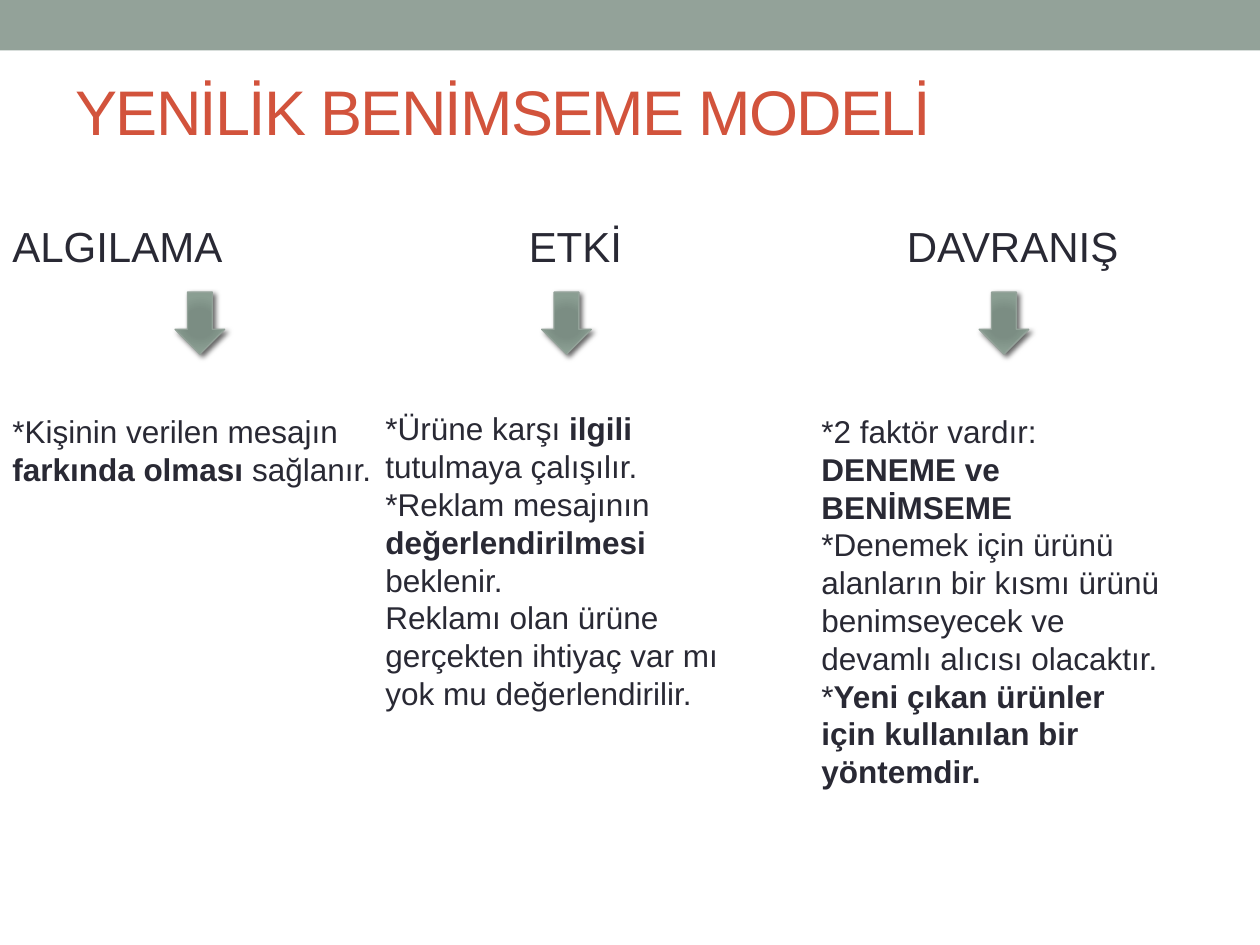
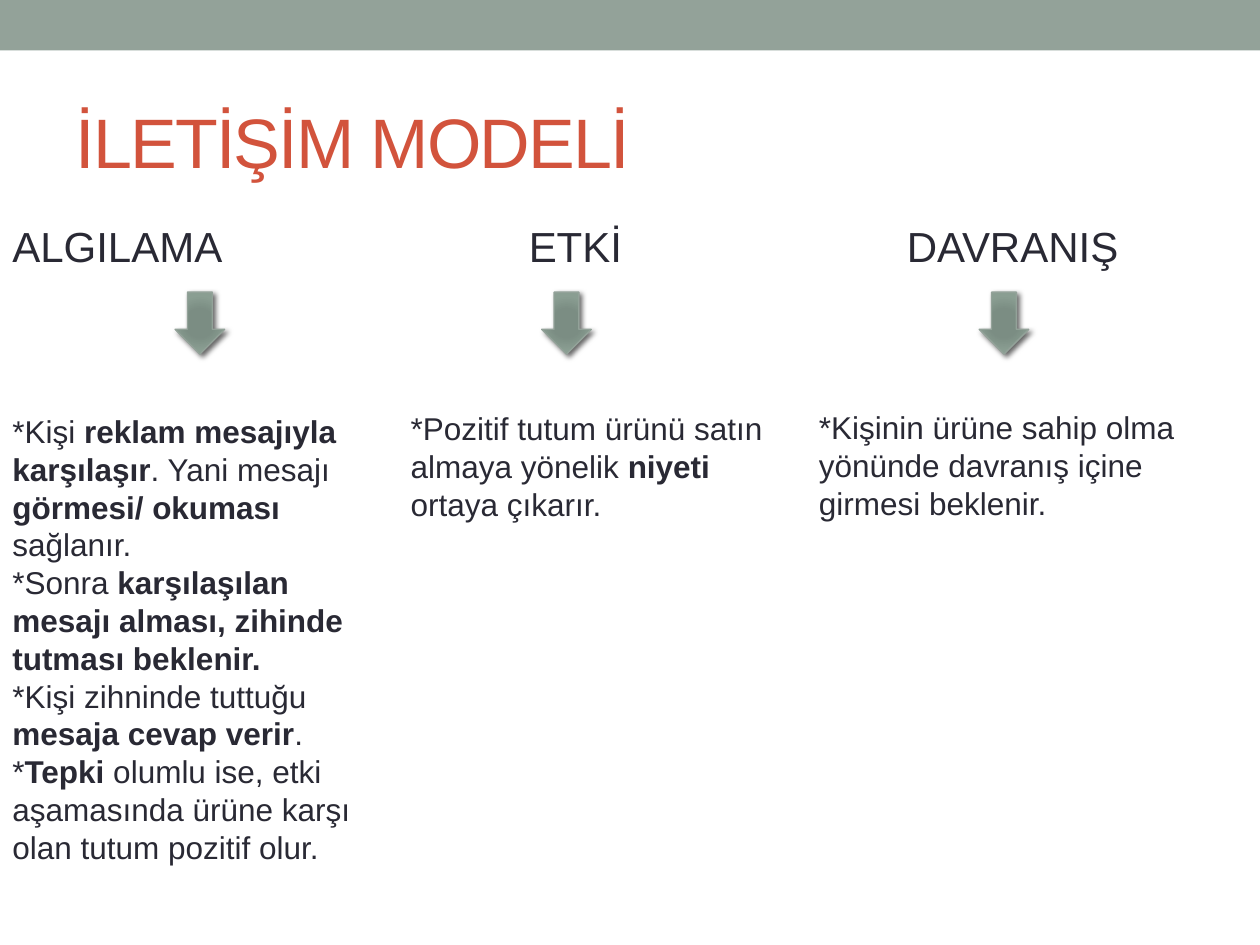
from dataclasses import dataclass

from lxml.etree import SubElement
from pptx import Presentation
from pptx.dml.color import RGBColor
from pptx.enum.shapes import MSO_SHAPE
from pptx.enum.text import MSO_ANCHOR, MSO_AUTO_SIZE, PP_ALIGN
from pptx.oxml import parse_xml
from pptx.oxml.ns import nsdecls, qn
from pptx.shapes.autoshape import Shape
from pptx.slide import Slide
from pptx.text.text import TextFrame
from pptx.util import Cm, Pt

# Shared look
FONT = "Arial"
SAGE, RUST, INK = "93A299", "D2533C", "292934"
STOPS = [(0, "7B8E82"), (34, "7B8D83"), (70, "8A9E92"), (100, SAGE)]
HEADS = "ALGILAMA\tETKİ\tDAVRANIŞ"
TABS = (10.41, 18.03)
ARROWS = (3.53, 10.92, 19.74)


@dataclass
class Note:
    """A text column; bars in a line switch bold on and off."""
    left: float
    top: float
    width: float
    height: float
    lines: list[str]


@dataclass
class Page:
    title: str
    size: int
    anchor: MSO_ANCHOR
    notes: list[Note]


PAGES = [
    Page("YENİLİK BENİMSEME MODELİ", 36, MSO_ANCHOR.TOP, [
        Note(7.52, 8.13, 8.18, 7.19, [
            "*Ürüne karşı |ilgili |tutulmaya çalışılır.",
            "*Reklam mesajının |değerlendirilmesi| beklenir.",
            "Reklamı olan ürüne gerçekten ihtiyaç var mı yok mu değerlendirilir."]),
        Note(16.31, 8.18, 7.37, 7.95, [
            "*2 faktör vardır:",
            "|DENEME ve BENİMSEME",
            "*Denemek için ürünü alanların bir kısmı ürünü benimseyecek ve "
            "devamlı alıcısı olacaktır.",
            "*|Yeni çıkan ürünler için kullanılan bir yöntemdir."]),
        Note(0, 8.18, 8.18, 1.8, [
            "*Kişinin verilen mesajın |farkında olması |sağlanır."]),
    ]),
    Page("İLETİŞİM MODELİ", 40, MSO_ANCHOR.MIDDLE, [
        Note(8.03, 8.13, 8.18, 3.33, [
            "*Pozitif tutum ürünü satın almaya yönelik |niyeti| ortaya çıkarır."]),
        Note(0, 8.18, 8.18, 10.26, [
            "*Kişi |reklam mesajıyla karşılaşır|. Yani mesajı "
            "|görmesi/ okuması |sağlanır.",
            "*Sonra |karşılaşılan mesajı alması, zihinde tutması beklenir.",
            "*Kişi zihninde tuttuğu |mesaja cevap verir|.",
            "*|Tepki| olumlu ise, etki aşamasında ürüne karşı olan tutum "
            "pozitif olur."]),
        Note(16.26, 8.1, 8.18, 2.57, [
            "*Kişinin ürüne sahip olma yönünde davranış içine girmesi beklenir."]),
    ]),
]


def paint(code: str) -> RGBColor:
    return RGBColor.from_string(code)


def place(shape: Shape, left: float, top: float, width: float, height: float) -> None:
    shape.left, shape.top = Cm(left), Cm(top)
    shape.width, shape.height = Cm(width), Cm(height)


def write(frame: TextFrame, lines: list[str], *, size: int = 18, color: str = INK,
          anchor: MSO_ANCHOR = MSO_ANCHOR.TOP, track: int = 0,
          tabs: tuple[float, ...] = ()) -> None:
    frame.word_wrap = True
    frame.vertical_anchor = anchor
    for row, line in enumerate(lines):
        para = frame.add_paragraph() if row else frame.paragraphs[0]
        para.alignment = PP_ALIGN.LEFT
        if tabs:
            stops = SubElement(para._p.get_or_add_pPr(), qn("a:tabLst"))
            for stop in tabs:
                SubElement(stops, qn("a:tab"), pos=str(Cm(stop)), algn="l")
        for turn, part in enumerate(line.split("|")):
            if not part:
                continue
            run = para.add_run()
            run.text = part
            font = run.font
            font.name, font.size, font.bold = FONT, Pt(size), turn % 2 == 1
            font.color.rgb = paint(color)
            if track:
                run._r.get_or_add_rPr().set("spc", str(track))


def add_band(slide: Slide) -> None:
    band = slide.shapes.add_shape(MSO_SHAPE.RECTANGLE, 0, 0, Cm(25.4), Cm(1.02))
    band.shadow.inherit = False
    band.fill.solid()
    band.fill.fore_color.rgb = paint(SAGE)
    band.line.fill.background()


def add_arrow(slide: Slide, left: float) -> None:
    arrow = slide.shapes.add_shape(
        MSO_SHAPE.DOWN_ARROW, Cm(left), Cm(5.89), Cm(1), Cm(1.25))
    arrow.line.color.rgb = paint(SAGE)
    arrow.line.width = Pt(0.75)
    arrow.shadow.inherit = False
    arrow.fill.background()
    props = arrow._element.spPr
    # Radial fill
    stops = "".join(f'<a:gs pos="{pos * 1000}"><a:srgbClr val="{code}"/></a:gs>'
                    for pos, code in STOPS)
    props.replace(props.find(qn("a:noFill")), parse_xml(
        f'<a:gradFill {nsdecls("a")} rotWithShape="1"><a:gsLst>{stops}</a:gsLst>'
        '<a:path path="circle"><a:fillToRect l="100000" t="100000" '
        'r="100000" b="100000"/></a:path></a:gradFill>'))
    # Soft shadow
    props.find(qn("a:effectLst")).append(parse_xml(
        f'<a:outerShdw {nsdecls("a")} blurRad="{Pt(3)}" dist="{Pt(2)}" '
        'dir="2700000" rotWithShape="0"><a:srgbClr val="000000">'
        '<a:alpha val="60000"/></a:srgbClr></a:outerShdw>'))


def add_note(slide: Slide, note: Note) -> None:
    box = slide.shapes.add_textbox(
        Cm(note.left), Cm(note.top), Cm(note.width), Cm(note.height))
    write(box.text_frame, note.lines)
    box.text_frame.auto_size = MSO_AUTO_SIZE.SHAPE_TO_FIT_TEXT


def add_page(deck: Presentation, page: Page) -> None:
    slide = deck.slides.add_slide(deck.slide_layouts[5])
    add_band(slide)
    # Title
    title = slide.shapes.title
    place(title, 1.27, 1.47, 22.86, 2.74)
    title.text_frame.margin_top = title.text_frame.margin_bottom = 0
    write(title.text_frame, [page.title], size=page.size, color=RUST,
          anchor=page.anchor, track=-100)
    # Column heads
    heads = slide.shapes.add_textbox(0, Cm(4.32), Cm(25.4), Cm(13.69))
    write(heads.text_frame, [HEADS], size=24, tabs=TABS)
    # Arrows and notes
    for left in ARROWS:
        add_arrow(slide, left)
    for note in page.notes:
        add_note(slide, note)


def main() -> None:
    deck = Presentation()
    deck.slide_width, deck.slide_height = Cm(25.4), Cm(19.05)
    for page in PAGES:
        add_page(deck, page)
    deck.save("out.pptx")


if __name__ == "__main__":
    main()
